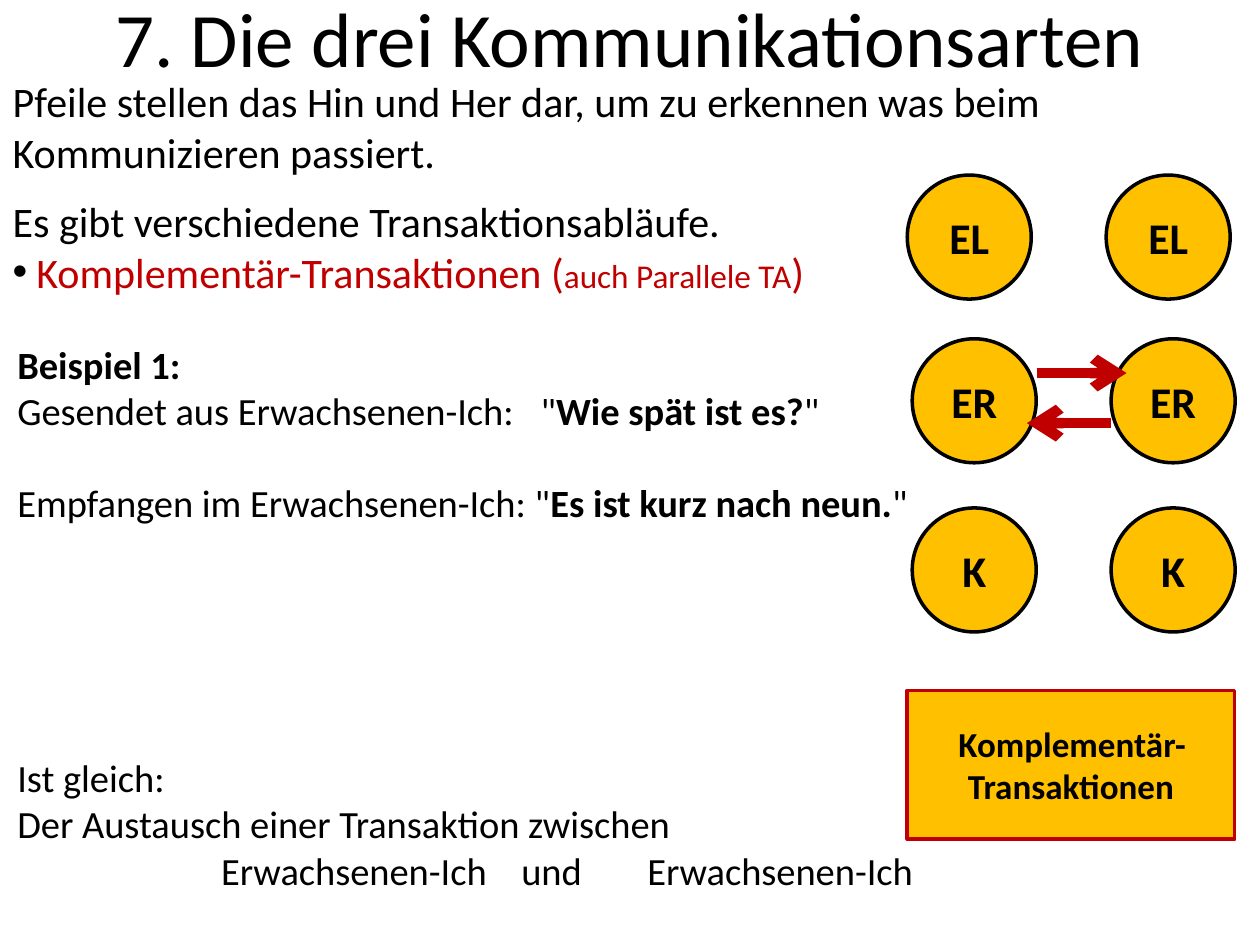
from dataclasses import dataclass

from lxml.etree import SubElement
from pptx import Presentation
from pptx.dml.color import RGBColor
from pptx.enum.shapes import MSO_CONNECTOR as Connector, MSO_SHAPE as Shape
from pptx.enum.text import MSO_ANCHOR as Anchor, MSO_AUTO_SIZE as AutoSize, PP_ALIGN as Align
from pptx.oxml.ns import qn
from pptx.util import Cm, Pt


@dataclass(frozen=True)
class Theme:
    font: str = "Calibri"
    black: RGBColor = RGBColor(0x00, 0x00, 0x00)
    red: RGBColor = RGBColor(0xC0, 0x00, 0x00)
    amber: RGBColor = RGBColor(0xFF, 0xC0, 0x00)
    title: int = 44
    ego_state: int = 25
    intro: int = 24
    example: int = 22
    label: int = 20
    aside: int = 19


theme = Theme()


def add_span(para, text, size, bold=False, color=theme.black):
    span = para.add_run()
    span.text = text
    span.font.name = theme.font
    span.font.size = Pt(size)
    span.font.bold = bold
    span.font.color.rgb = color


def add_label_shape(kind, left, top, width, height, text, size, outline):
    """Add an amber shape with a centred bold label."""
    shape = page.shapes.add_shape(kind, Cm(left), Cm(top), Cm(width), Cm(height))
    shape.shadow.inherit = False
    shape.fill.solid()
    shape.fill.fore_color.rgb = theme.amber
    shape.line.color.rgb = outline
    shape.line.width = Pt(2)
    shape.text_frame.word_wrap = True
    shape.text_frame.vertical_anchor = Anchor.MIDDLE
    para = shape.text_frame.paragraphs[0]
    para.alignment = Align.CENTER
    add_span(para, text, size, bold=True)


deck = Presentation()
deck.slide_width, deck.slide_height = Cm(25.4), Cm(19.05)
page = deck.slides.add_slide(deck.slide_layouts[1])

# Title
title = page.shapes.title
title.left, title.top, title.width, title.height = Cm(1.27), Cm(-0.86), Cm(22.86), Cm(3.18)
title.text_frame.auto_size = AutoSize.NONE
title.text_frame.vertical_anchor = Anchor.MIDDLE
title.text_frame.paragraphs[0].alignment = Align.CENTER
add_span(title.text_frame.paragraphs[0], "7. Die drei Kommunikationsarten", theme.title)

# Introduction, ending in one bullet
intro = page.placeholders[1]
intro.left, intro.top, intro.width, intro.height = Cm(0), Cm(1.4), Cm(25.4), Cm(5)
frame = intro.text_frame
frame.auto_size = AutoSize.NONE
frame.vertical_anchor = Anchor.TOP
intro_lines = [
    (0, False, [("Pfeile stellen das Hin und Her dar, um zu erkennen was beim Kommunizieren passiert.",
                 theme.intro, theme.black)]),
    (11, False, [("Es gibt verschiedene Transaktionsabläufe.", theme.intro, theme.black)]),
    (0, True, [("Komplementär-Transaktionen (", theme.intro, theme.red),
               ("auch Parallele TA", theme.aside, theme.red),
               (")", theme.intro, theme.red)]),
]
for index, (gap, bulleted, spans) in enumerate(intro_lines):
    para = frame.paragraphs[0] if index == 0 else frame.add_paragraph()
    para.space_before = Pt(gap)
    indent = Cm(0.48) if bulleted else 0
    properties = para._p.get_or_add_pPr()
    properties.set("marL", str(indent))
    properties.set("indent", str(-indent))
    if bulleted:
        bullet_color = SubElement(properties, qn("a:buClr"))
        SubElement(bullet_color, qn("a:srgbClr")).set("val", str(theme.black))
        SubElement(properties, qn("a:buChar")).set("char", "•")
    else:
        SubElement(properties, qn("a:buNone"))
    for text, size, color in spans:
        add_span(para, text, size, color=color)

# Example dialogue: space before, tab stops in cm, (text, bold) spans
example = page.shapes.add_textbox(Cm(0.1), Cm(6.75), Cm(24.4), Cm(11.5))
frame = example.text_frame
frame.word_wrap = True
example_lines = [
    (0, [], [("Beispiel 1:", True)]),
    (0, [10.55], [("Gesendet aus Erwachsenen-Ich:\t\"", False), ("Wie spät ist es?", True), ("\"", False)]),
    (26, [], [("Empfangen im Erwachsenen-Ich: \"", False), ("Es ist kurz nach neun.", True), ("\"", False)]),
    (131, [], [("Ist gleich:", False)]),
    (0, [], [("Der Austausch einer Transaktion zwischen", False)]),
    (0, [4.11, 10.16, 12.7], [("\tErwachsenen-Ich\tund\tErwachsenen-Ich", False)]),
]
for index, (gap, stops, spans) in enumerate(example_lines):
    para = frame.paragraphs[0] if index == 0 else frame.add_paragraph()
    para.space_before = Pt(gap)
    if stops:
        tab_list = SubElement(para._p.get_or_add_pPr(), qn("a:tabLst"))
        for stop in stops:
            tab = SubElement(tab_list, qn("a:tab"))
            tab.set("pos", str(Cm(stop)))
            tab.set("algn", "l")
    for text, bold in spans:
        add_span(para, text, theme.example, bold)

# Ego states of both partners
diameter, partner_distance = 2.5, 4.01
for name, left, top in [("EL", 18.29, 3.53), ("ER", 18.39, 6.83), ("K", 18.39, 10.24)]:
    for partner in range(2):
        add_label_shape(Shape.OVAL, left + partner * partner_distance, top, diameter, diameter,
                        name, theme.ego_state, theme.black)

# Message and reply between the adult states
for start, end, height in [(20.9, 22.71, 7.52), (22.4, 20.7, 8.53)]:
    arrow = page.shapes.add_connector(Connector.STRAIGHT, Cm(start), Cm(height), Cm(end), Cm(height))
    arrow.line.color.rgb = theme.red
    arrow.line.width = Pt(6)
    SubElement(arrow.line._get_or_add_ln(), qn("a:tailEnd")).set("type", "arrow")
    SubElement(arrow._element.spPr, qn("a:effectLst"))

add_label_shape(Shape.RECTANGLE, 18.29, 13.92, 6.6, 3, "Komplementär-Transaktionen",
                theme.label, theme.red)

deck.save("out.pptx")
